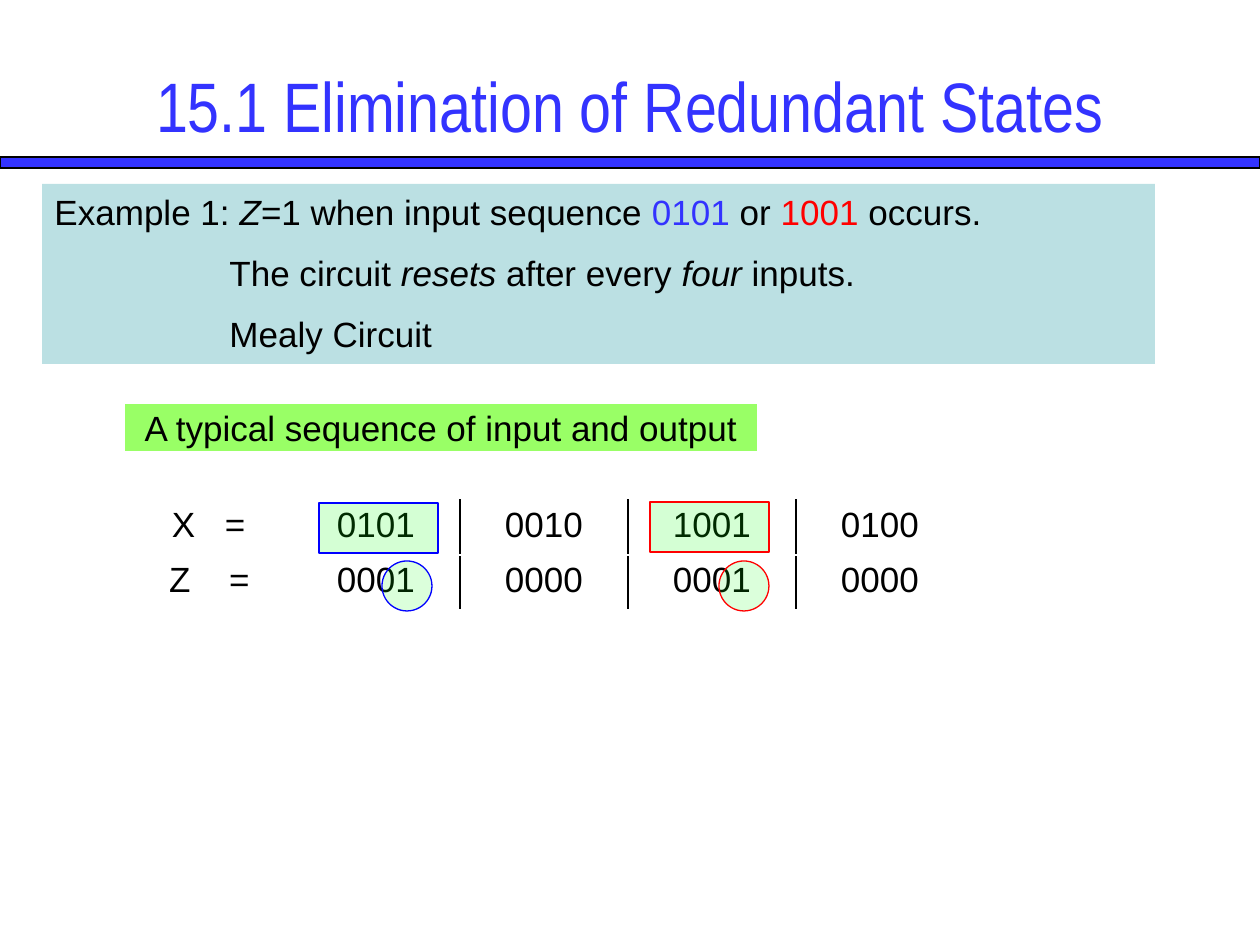
from lxml.etree import SubElement
from pptx import Presentation
from pptx.dml.color import RGBColor
from pptx.enum.shapes import MSO_SHAPE
from pptx.enum.text import MSO_ANCHOR, PP_ALIGN
from pptx.oxml import parse_xml
from pptx.oxml.ns import nsdecls, qn
from pptx.util import Emu, Pt

EMU_PER_PX = 914400 / 126
BLACK = RGBColor(0, 0, 0)
WHITE = RGBColor(255, 255, 255)
ROYAL = RGBColor(0x33, 0x33, 0xFF)
BLUE = RGBColor(0, 0, 255)
RED = RGBColor(255, 0, 0)
GREEN = RGBColor(0, 255, 0)
LIME = RGBColor(0x99, 0xFF, 0x66)
PALE_TEAL = RGBColor(0xBB, 0xE0, 0xE3)

BODY = {"name": "Arial", "size": Pt(20)}
TITLE = {"name": "Arial Narrow", "size": Pt(40)}
ITALIC = {"italic": True}

EXAMPLE = [
    [("Example 1: ", {}), ("Z", ITALIC), ("=1 when input sequence ", {}),
     ("0101", {"color": ROYAL}), (" or ", {}), ("1001", {"color": RED}),
     (" occurs.", {})],
    [("The circuit ", {}), ("resets", ITALIC), (" after every ", {}),
     ("four", ITALIC), (" inputs.", {})],
    [("Mealy Circuit", {})],
]
SEQUENCES = [
    ("X\t=", "0101", "0010", "1001", "0100"),
    ("Z\t=", "0001", "0000", "0001", "0000"),
]
LABEL_GAPS = [(48, 53), (45, 60)]
COLUMN_WIDTH = 168
ROW_HEIGHT = 55


def px(length):
    return Emu(round(length * EMU_PER_PX))


def set_attributes(target, values):
    for name, value in values.items():
        setattr(target, name, value)


def add_run(paragraph, text, formats):
    run = paragraph.add_run()
    run.text = text
    values = dict(formats)
    run.font.color.rgb = values.pop("color", BLACK)
    set_attributes(run.font, values)


def add_box(slide, box, fill, line=None, kind=MSO_SHAPE.RECTANGLE, opacity=100):
    shape = slide.shapes.add_shape(kind, *map(px, box))
    shape.shadow.inherit = False
    shape.fill.solid()
    shape.fill.fore_color.rgb = fill
    if opacity < 100:
        color = shape._element.spPr.find(qn("a:solidFill")).find(qn("a:srgbClr"))
        SubElement(color, qn("a:alpha")).set("val", str(opacity * 1000))
    if line is None:
        shape.line.fill.background()
    else:
        shape.line.color.rgb = line
        shape.line.width = Pt(0.75)
    return shape


def add_title(slide, text):
    title = slide.shapes.add_textbox(*map(px, (31, 26, 1197, 157)))
    set_attributes(title.text_frame,
                   {"word_wrap": True, "vertical_anchor": MSO_ANCHOR.MIDDLE})
    paragraph = title.text_frame.paragraphs[0]
    paragraph.alignment = PP_ALIGN.CENTER
    add_run(paragraph, text, {**TITLE, "color": ROYAL})


def add_example(slide):
    frame = add_box(slide, (42, 184, 1113, 180), PALE_TEAL).text_frame
    set_attributes(frame, {"word_wrap": True, "vertical_anchor": MSO_ANCHOR.TOP})
    for index, runs in enumerate(EXAMPLE):
        paragraph = frame.add_paragraph() if index else frame.paragraphs[0]
        paragraph.alignment = PP_ALIGN.LEFT
        if index:
            paragraph.space_before = Pt(11)
            paragraph._p.get_or_add_pPr().set("marL", str(px(175)))
        for text, formats in runs:
            add_run(paragraph, text, {**BODY, **formats})


def add_caption(slide, text):
    frame = add_box(slide, (124, 403, 634, 49), LIME, WHITE).text_frame
    set_attributes(frame, {"word_wrap": False, "vertical_anchor": MSO_ANCHOR.MIDDLE})
    paragraph = frame.paragraphs[0]
    paragraph.alignment = PP_ALIGN.CENTER
    add_run(paragraph, text, BODY)


def add_border(cell, position, side):
    cell._tc.get_or_add_tcPr().insert(position, parse_xml(
        f'<a:{side} {nsdecls("a")} w="{Pt(1)}"><a:solidFill>'
        f'<a:srgbClr val="{BLACK}"/></a:solidFill></a:{side}>'))


def set_label_gap(cell, paragraph, margin, tab):
    cell.margin_left = px(margin)
    paragraph.alignment = PP_ALIGN.LEFT
    stops = SubElement(paragraph._p.get_or_add_pPr(), qn("a:tabLst"))
    stop = SubElement(stops, qn("a:tab"))
    stop.set("pos", str(px(tab)))
    stop.set("algn", "l")


def add_sequences(slide):
    rows, columns = len(SEQUENCES), len(SEQUENCES[0])
    box = (124, 500, COLUMN_WIDTH * columns, ROW_HEIGHT * rows)
    table = slide.shapes.add_table(rows, columns, *map(px, box)).table
    set_attributes(table, {"first_row": False, "horz_banding": False})
    for row_index, texts in enumerate(SEQUENCES):
        for column, text in enumerate(texts):
            cell = table.cell(row_index, column)
            cell.fill.background()
            paragraph = cell.text_frame.paragraphs[0]
            paragraph.alignment = PP_ALIGN.CENTER
            add_run(paragraph, text, BODY)
            if column == 0:
                set_label_gap(cell, paragraph, *LABEL_GAPS[row_index])
            if 0 < column < columns - 1:
                add_border(cell, 0, "lnR")
            if column > 1:
                add_border(cell, 0, "lnL")


def add_highlight(slide, left, top, circle_left, color):
    add_box(slide, (left, top, 119, 50), GREEN, color, opacity=17)
    add_box(slide, (circle_left, 561, 50, 50), GREEN, color,
            MSO_SHAPE.OVAL, 14)


def main():
    presentation = Presentation()
    presentation.slide_width = px(1260)
    presentation.slide_height = px(945)
    slide = presentation.slides.add_slide(presentation.slide_layouts[6])
    add_box(slide, (0, 157, 1260, 11), ROYAL, BLACK)
    add_example(slide)
    add_sequences(slide)
    add_caption(slide, "A typical sequence of input and output")
    add_highlight(slide, 319, 503, 382, BLUE)
    add_highlight(slide, 650, 502, 719, RED)
    add_title(slide, "15.1 Elimination of Redundant States")
    presentation.save("out.pptx")


if __name__ == "__main__":
    main()
